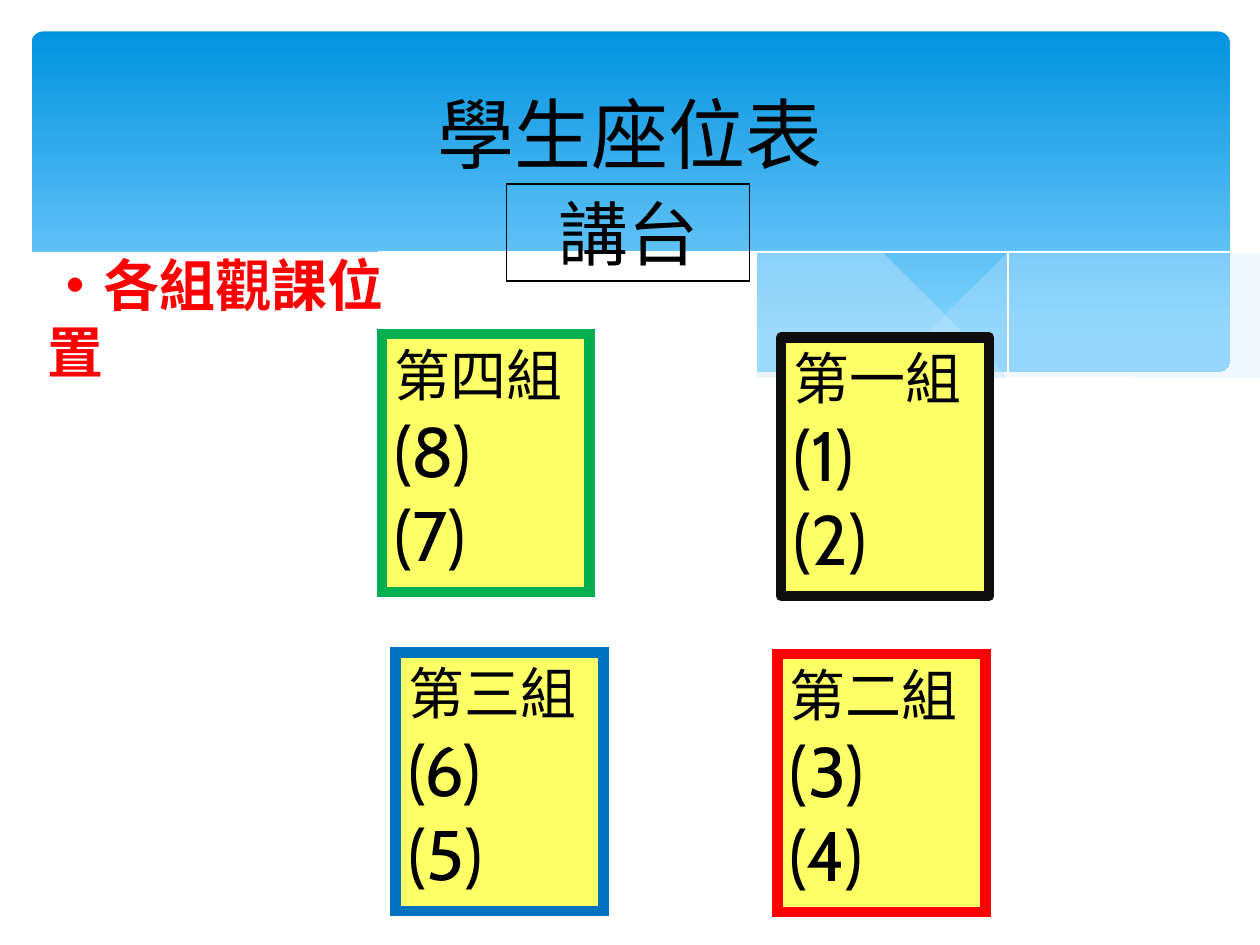
from dataclasses import dataclass

from lxml.etree import SubElement
from pptx import Presentation
from pptx.dml.color import RGBColor
from pptx.enum.shapes import MSO_SHAPE
from pptx.enum.text import MSO_ANCHOR, MSO_AUTO_SIZE, PP_ALIGN
from pptx.oxml.ns import qn
from pptx.util import Inches, Pt

FONT = "Cabin"
Points = list[tuple[float, float]]


@dataclass
class Wave:
    edges: list[Points]  # each edge is a smooth curve, joined by straight lines
    fill: str | None = None
    opacity: int = 100


@dataclass
class Group:
    name: str
    seats: tuple[int, int]
    left: float
    top: float
    color: str
    mitered: bool = True


WAVES = [
    Wave([[(9.76, 1.99), (9.21, 2.09), (8.61, 2.23), (7.79, 2.42), (7.06, 2.57), (6.61, 2.65)],
          [(6.61, 2.65), (7.18, 2.72), (7.69, 2.77), (8.14, 2.78), (8.63, 2.75), (9.05, 2.69),
           (9.42, 2.59), (9.76, 2.47)]], "C6E7FC", 29),
    Wave([[(8.93, 2.73), (8.37, 2.65), (7.75, 2.54), (7.06, 2.4), (6.29, 2.22), (5.69, 2.08),
           (5.14, 1.98), (4.65, 1.91), (4.2, 1.87), (3.8, 1.86), (3.28, 1.87), (2.86, 1.91)],
          [(2.86, 1.91), (3.42, 1.99), (4.04, 2.11), (4.91, 2.32), (5.66, 2.48), (6.34, 2.61),
           (6.95, 2.7), (7.48, 2.76), (7.96, 2.78), (8.48, 2.77), (8.93, 2.73)]], "C6E7FC", 40),
    Wave([[(3.09, 1.95), (3.44, 1.9), (3.87, 1.87), (4.33, 1.87), (4.89, 1.9), (5.56, 1.97),
           (6.36, 2.08), (7.27, 2.26), (8.31, 2.51), (9.07, 2.72)]]),
    Wave([[(6.13, 2.57), (6.95, 2.35), (7.76, 2.16), (8.66, 1.99), (9.24, 1.9), (9.75, 1.85)]]),
    Wave([[(9.77, 2.46), (9.4, 2.59), (8.99, 2.69), (8.5, 2.75), (8.09, 2.77), (7.61, 2.75),
           (7.08, 2.7), (6.47, 2.62), (5.79, 2.5), (5.03, 2.33), (4.47, 2.2), (3.91, 2.07),
           (3.39, 1.97), (2.92, 1.91), (2.5, 1.86), (2.11, 1.84), (1.77, 1.84), (1.32, 1.86),
           (0.95, 1.91), (0.67, 1.97), (0.46, 2.03), (0.23, 2.13)],
          [(0.23, 3.29), (9.77, 3.29)]], "FFFFFF"),
]

GROUPS = [
    Group("第一組", (1, 2), 6.2, 2.68, "0D0D0D", mitered=False),
    Group("第二組", (3, 4), 6.17, 5.19, "FF0000"),
    Group("第四組", (8, 7), 3.03, 2.65, "00B050"),
    Group("第三組", (6, 5), 3.14, 5.18, "0070C0"),
]


def rgb(color: str) -> RGBColor:
    return RGBColor.from_string(color)


def smooth(points: Points, steps: int = 4) -> Points:
    """Interpolate a Catmull-Rom curve through the points."""
    if len(points) < 3:
        return points
    padded = [points[0], *points, points[-1]]
    curve = [points[0]]
    for a, b, c, d in zip(padded, padded[1:], padded[2:], padded[3:]):
        for t in (i / steps for i in range(1, steps + 1)):
            curve.append(tuple(
                (2 * q + (r - p) * t + (2 * p - 5 * q + 4 * r - u) * t**2
                 + (3 * q - p - 3 * r + u) * t**3) / 2
                for p, q, r, u in zip(a, b, c, d)))
    return curve


def draw_wave(s, wave: Wave) -> None:
    points = [p for edge in wave.edges for p in smooth(edge)]
    builder = s.shapes.build_freeform(*points[0], scale=Inches(1))
    builder.add_line_segments(points[1:], close=wave.fill is not None)
    sp = builder.convert_to_shape()
    sp.shadow.inherit = False
    if wave.fill is None:
        sp.fill.background()
        sp.line.color.rgb = rgb("FFFFFF")
        sp.line.width = Pt(0)
        return
    sp.line.fill.background()
    sp.fill.solid()
    sp.fill.fore_color.rgb = rgb(wave.fill)
    if wave.opacity < 100:
        color = sp.fill._xPr.find(qn("a:solidFill"))[0]
        SubElement(color, qn("a:alpha"), val=str(wave.opacity * 1000))


def draw_sky(s) -> None:
    sp = s.shapes.add_shape(MSO_SHAPE.ROUNDED_RECTANGLE, Inches(0.25), Inches(0.25),
                            Inches(9.51), Inches(2.7))
    sp.adjustments[0] = 0.034
    sp.shadow.inherit = False
    sp.line.fill.background()
    sp.fill.gradient()
    sp.fill.gradient_angle = 270
    for stop, color, position in zip(sp.fill.gradient_stops, ("0293E0", "83D3FE"), (0, 0.9)):
        stop.color.rgb = rgb(color)
        stop.position = position


def write(tf, lines: list[tuple[str, int]], align=PP_ALIGN.LEFT,
          color: str = "000000", bold: bool = False) -> None:
    for i, (text, size) in enumerate(lines):
        p = tf.add_paragraph() if i else tf.paragraphs[0]
        p.text = text
        p.alignment = align
        p.font.name = FONT
        p.font.size = Pt(size)
        p.font.bold = bold
        p.font.color.rgb = rgb(color)


def draw_box(s, left: float, top: float, width: float, height: float,
             line: str, weight: float, fill: str | None = None):
    sp = s.shapes.add_shape(MSO_SHAPE.RECTANGLE, *map(Inches, (left, top, width, height)))
    sp.shadow.inherit = False
    sp.line.color.rgb = rgb(line)
    sp.line.width = Pt(weight)
    if fill:
        sp.fill.solid()
        sp.fill.fore_color.rgb = rgb(fill)
    else:
        sp.fill.background()
    sp.text_frame.word_wrap = True
    sp.text_frame.vertical_anchor = MSO_ANCHOR.TOP
    sp.text_frame.auto_size = MSO_AUTO_SIZE.SHAPE_TO_FIT_TEXT
    return sp


def draw_group(s, group: Group) -> None:
    sp = draw_box(s, group.left, group.top, 1.65, 2.05, group.color, 6, "FFFF66")
    if group.mitered:
        SubElement(sp.line._get_or_add_ln(), qn("a:miter"), lim="800000")
    write(sp.text_frame, [(group.name, 32)] + [(f"({seat})", 40) for seat in group.seats])


def main() -> None:
    prs = Presentation()
    prs.slide_width, prs.slide_height = Inches(10), Inches(7.5)
    s = prs.slides.add_slide(prs.slide_layouts[5])

    draw_sky(s)
    for wave in WAVES:
        draw_wave(s, wave)

    title = s.shapes.title
    s.shapes.element.append(title.element)  # bring the title in front of the waves
    title.left, title.top, title.width, title.height = map(Inches, (0.5, 0.37, 9, 1.37))
    title.text_frame.vertical_anchor = MSO_ANCHOR.MIDDLE
    write(title.text_frame, [("學生座位表", 44)], PP_ALIGN.CENTER)

    for group in GROUPS:
        draw_group(s, group)

    podium = draw_box(s, 4.02, 1.46, 1.93, 0.77, "000000", 0.75)
    write(podium.text_frame, [("講台", 40)], PP_ALIGN.CENTER)

    label = s.shapes.add_textbox(Inches(0.28), Inches(1.94), Inches(3.1), Inches(0.64))
    label.text_frame.word_wrap = True
    write(label.text_frame, [("•各組觀課位置", 32)], color="FF0000", bold=True)

    prs.save("out.pptx")


if __name__ == "__main__":
    main()
